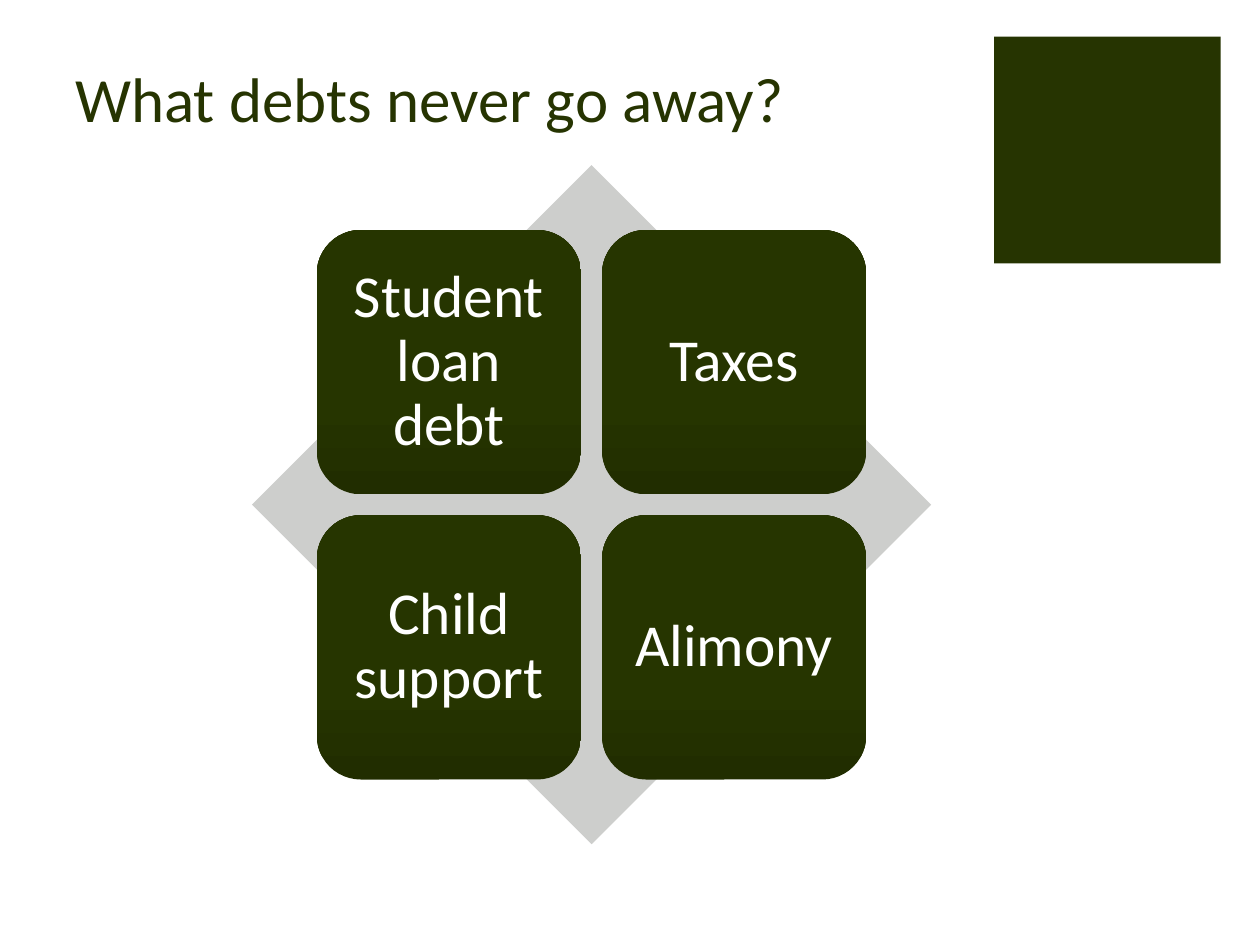
import pptx
import pptx.dml.color
import pptx.enum.shapes
import pptx.enum.text
import pptx.util

Cm = pptx.util.Cm
Pt = pptx.util.Pt
SHAPES = pptx.enum.shapes.MSO_SHAPE
ALIGN = pptx.enum.text.PP_ALIGN
ANCHOR = pptx.enum.text.MSO_ANCHOR

COLORS = {
    "title": "263401",
    "diamond": "CDCECC",
    "tile": "263500",
    "tile_shade": "212D00",
    "tile_text": "FFFFFF",
}
DEBTS = [["Student loan debt", "Taxes"], ["Child support", "Alimony"]]

DIAMOND_LEFT, DIAMOND_TOP, DIAMOND_SIZE = 5.08, 3.33, 13.69
TILE_SIZE, TILE_GAP = 5.33, 0.42


class SlideBuilder:
    font = "Calibri"
    title_size = 36
    tile_size = 34

    def __init__(self, slide):
        self.slide = slide

    def color(self, name):
        return pptx.dml.color.RGBColor.from_string(COLORS[name])

    def shape(self, kind, left, top, width, height):
        shape = self.slide.shapes.add_shape(
            kind, Cm(left), Cm(top), Cm(width), Cm(height))
        shape.shadow.inherit = False
        shape.line.fill.background()
        return shape

    def solid(self, kind, left, top, size, color):
        shape = self.shape(kind, left, top, size, size)
        shape.fill.solid()
        shape.fill.fore_color.rgb = self.color(color)

    def set_text(self, text_frame, text, size, color, anchor):
        text_frame.text = text
        text_frame.word_wrap = True
        text_frame.vertical_anchor = anchor
        paragraph = text_frame.paragraphs[0]
        font = paragraph.runs[0].font
        font.name = self.font
        font.size = Pt(size)
        font.color.rgb = self.color(color)
        return paragraph

    def title(self, text, left, top, width, height):
        box = self.slide.shapes.add_textbox(
            Cm(left), Cm(top), Cm(width), Cm(height))
        self.set_text(
            box.text_frame, text, self.title_size, "title", ANCHOR.BOTTOM)

    def tile(self, text, left, top, size):
        """Add a rounded tile that darkens towards its bottom edge."""
        shape = self.shape(SHAPES.ROUNDED_RECTANGLE, left, top, size, size)
        shape.fill.gradient()
        shape.fill.gradient_angle = 90
        stops = [(0, "tile_shade"), (0.35, "tile")]
        for stop, (position, color) in zip(shape.fill.gradient_stops, stops):
            stop.position = position
            stop.color.rgb = self.color(color)

        frame = shape.text_frame
        frame.margin_left = frame.margin_right = Cm(0.36)
        frame.margin_top = frame.margin_bottom = Cm(0.36)
        paragraph = self.set_text(
            frame, text, self.tile_size, "tile_text", ANCHOR.MIDDLE)
        paragraph.alignment = ALIGN.CENTER
        paragraph.line_spacing = 0.9


def main():
    presentation = pptx.Presentation()
    presentation.slide_width = Cm(25.4)
    presentation.slide_height = Cm(19.05)
    slide = presentation.slides.add_slide(presentation.slide_layouts[6])
    builder = SlideBuilder(slide)

    builder.solid(SHAPES.RECTANGLE, 20.04, 0.74, 4.57, "title")
    builder.title("What debts never go away?", 1.27, 0.79, 18.08, 2.06)
    builder.solid(
        SHAPES.DIAMOND, DIAMOND_LEFT, DIAMOND_TOP, DIAMOND_SIZE, "diamond")

    # The tile grid is centred on the diamond.
    margin = (DIAMOND_SIZE - 2 * TILE_SIZE - TILE_GAP) / 2
    pitch = TILE_SIZE + TILE_GAP
    for row, debts in enumerate(DEBTS):
        for column, debt in enumerate(debts):
            builder.tile(
                debt,
                DIAMOND_LEFT + margin + column * pitch,
                DIAMOND_TOP + margin + row * pitch,
                TILE_SIZE,
            )

    presentation.save("out.pptx")


if __name__ == "__main__":
    main()
